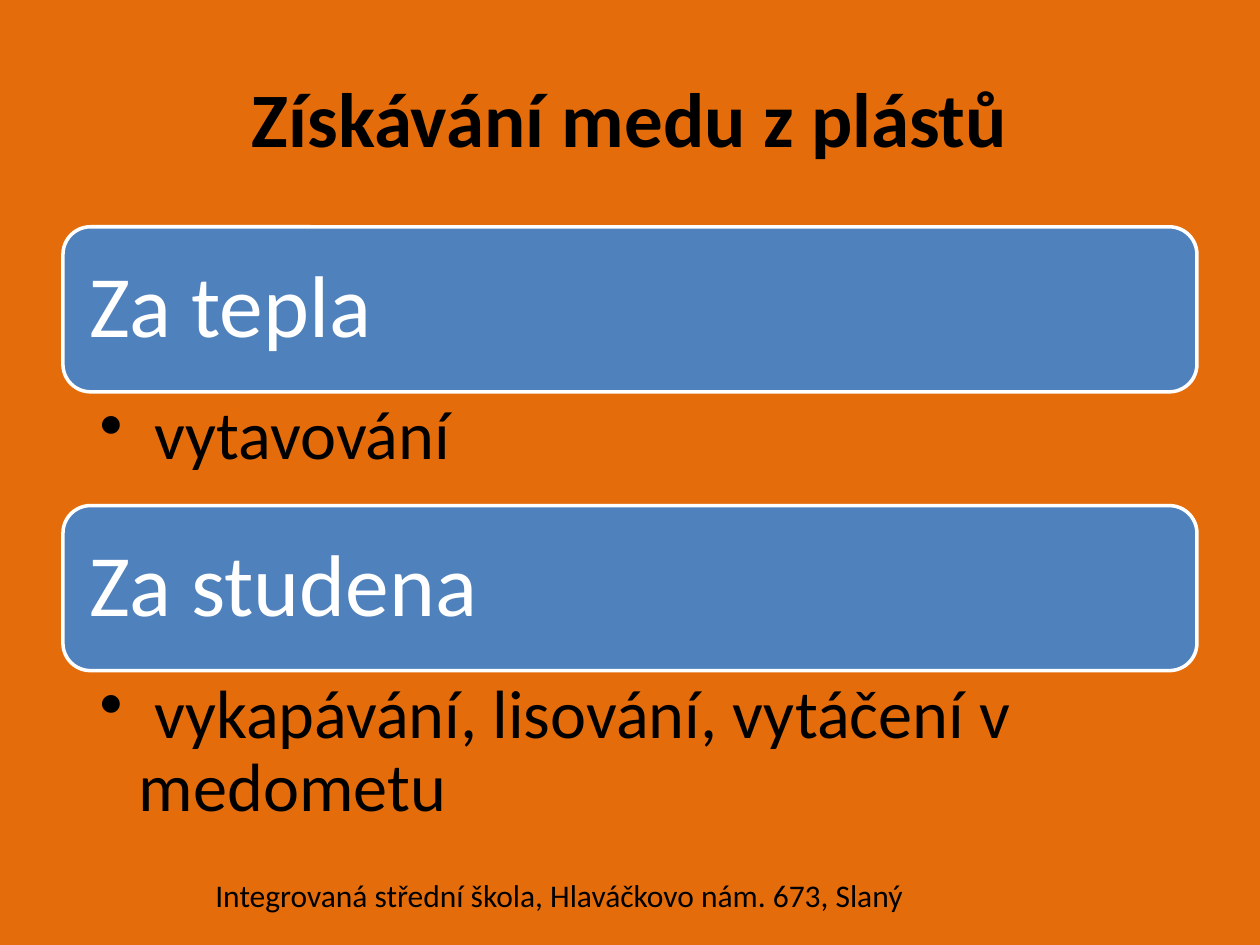
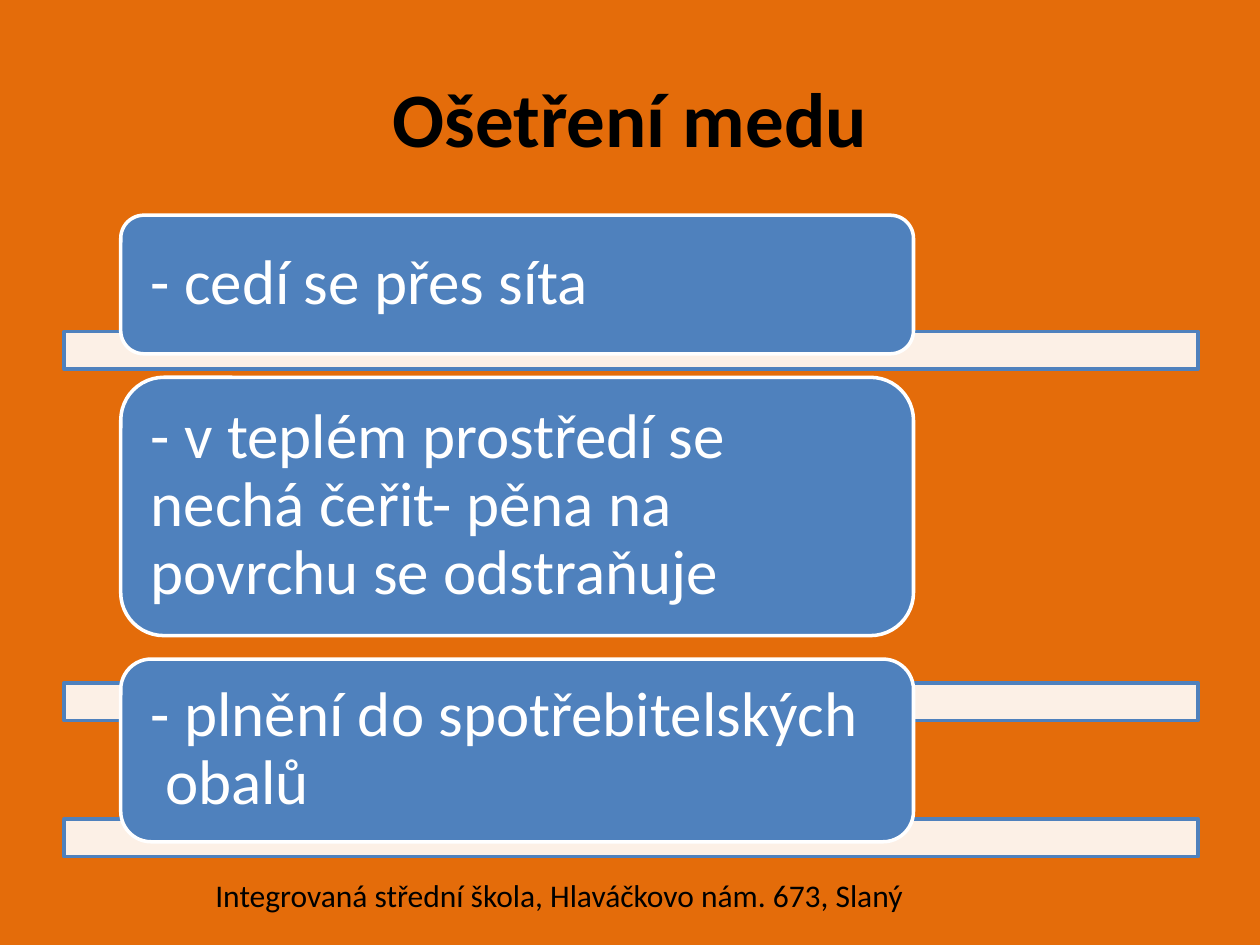
from dataclasses import dataclass

import pptx
import pptx.dml.color
import pptx.enum.shapes
import pptx.enum.text
import pptx.oxml.ns
import pptx.util
from lxml import etree

Pt = pptx.util.Pt
MSO_SHAPE = pptx.enum.shapes.MSO_SHAPE
PP_ALIGN = pptx.enum.text.PP_ALIGN
MSO_ANCHOR = pptx.enum.text.MSO_ANCHOR
qn = pptx.oxml.ns.qn

FOOTER = "Integrovaná střední škola, Hlaváčkovo nám. 673, Slaný"

# heading, detail, height of the detail
HARVEST_TITLE = "Získávání medu z plástů"
HARVEST_METHODS = [
    ("Za tepla", " vytavování", 65),
    ("Za studena", " vykapávání, lisování, vytáčení v medometu", 95.8),
]

# step, height of its box, top of the bar behind it
TREATMENT_TITLE = "Ošetření medu"
TREATMENT_STEPS = [
    ("- cedí se přes síta", 79.2, 189.4),
    ("- v teplém prostředí se nechá čeřit- pěna na povrchu se odstraňuje", 147.6, 390.2),
    ("- plnění do spotřebitelských\v obalů", 104.4, 468),
]


@dataclass(frozen=True)
class Theme:
    font: str = "Calibri"
    background: str = "E46C0A"
    box: str = "4F81BD"
    light: str = "FFFFFF"
    dark: str = "000000"
    bar_opacity: int = 90
    line_width: float = 2
    line_spacing: float = 0.9
    title_size: int = 44
    heading_size: int = 50
    detail_size: int = 39
    step_size: int = 36
    footer_size: int = 18


THEME = Theme()
MARGIN, CONTENT_WIDTH = 36, 648
CORNER_INSET = 0.16667 * 0.29289  # share of its height a rounded box adds to the insets


def rgb(value):
    return pptx.dml.color.RGBColor.from_string(value)


def write(frame, text, size, color, bold=False, align=PP_ALIGN.LEFT):
    frame.word_wrap = True
    frame.text = text
    paragraph = frame.paragraphs[0]
    paragraph.alignment = align
    paragraph.font.name = THEME.font
    paragraph.font.size = Pt(size)
    paragraph.font.bold = bold
    paragraph.font.color.rgb = rgb(color)
    return paragraph


def set_insets(frame, left, top, right, bottom):
    frame.margin_left, frame.margin_top = Pt(left), Pt(top)
    frame.margin_right, frame.margin_bottom = Pt(right), Pt(bottom)


def add_filled(slide, preset, place, fill, line):
    shape = slide.shapes.add_shape(preset, *map(Pt, place))
    shape.shadow.inherit = False
    shape.fill.solid()
    shape.fill.fore_color.rgb = rgb(fill)
    shape.line.color.rgb = rgb(line)
    shape.line.width = Pt(THEME.line_width)
    return shape


def add_box(slide, place, text, size, inset):
    box = add_filled(slide, MSO_SHAPE.ROUNDED_RECTANGLE, place, THEME.box, THEME.light)
    side = inset - CORNER_INSET * place[3]
    set_insets(box.text_frame, side, 0, side, 0)
    box.text_frame.vertical_anchor = MSO_ANCHOR.MIDDLE
    write(box.text_frame, text, size, THEME.light).line_spacing = THEME.line_spacing


def add_bar(slide, top):
    place = (MARGIN + 0.7, top, CONTENT_WIDTH, 21.6)
    bar = add_filled(slide, MSO_SHAPE.RECTANGLE, place, THEME.light, THEME.box)
    color = bar.fill._xPr.find(qn("a:solidFill"))[0]
    etree.SubElement(color, qn("a:alpha"), val=str(THEME.bar_opacity * 1000))


def add_bulleted(slide, place, text):
    frame = slide.shapes.add_textbox(*map(Pt, place)).text_frame
    set_insets(frame, 20.9, 5, 28, 5)
    paragraph = write(frame, text, THEME.detail_size, THEME.dark)
    paragraph.line_spacing = THEME.line_spacing
    properties = paragraph._p.get_or_add_pPr()
    indent = Pt(22.5)
    properties.set("marL", str(indent))
    properties.set("indent", str(-indent))
    bullet = etree.Element(qn("a:buChar"), char="•")
    properties.find(qn("a:defRPr")).addprevious(bullet)


def add_slide(deck, title):
    """Add a slide with the shared title and footer."""
    slide = deck.slides.add_slide(deck.slide_layouts[5])
    heading = slide.shapes.title
    heading.left, heading.top = Pt(MARGIN), Pt(21.6)
    heading.width, heading.height = Pt(CONTENT_WIDTH), Pt(90)
    heading.text_frame.vertical_anchor = MSO_ANCHOR.MIDDLE
    write(heading.text_frame, title, THEME.title_size, THEME.dark, True, PP_ALIGN.CENTER)
    footer = slide.shapes.add_textbox(Pt(116), Pt(496.8), Pt(532.8), Pt(29))
    write(footer.text_frame, FOOTER, THEME.footer_size, THEME.dark)
    return slide


def build_harvest(deck):
    slide = add_slide(deck, HARVEST_TITLE)
    top, heading_height = 129.6, 94.3
    for heading, detail, detail_height in HARVEST_METHODS:
        add_box(slide, (MARGIN, top, CONTENT_WIDTH, heading_height),
                heading, THEME.heading_size, 15)
        top += heading_height
        add_bulleted(slide, (MARGIN, top, CONTENT_WIDTH, detail_height), detail)
        top += detail_height


def build_treatment(deck):
    slide = add_slide(deck, TREATMENT_TITLE)
    top, gap = 123, 13.4
    for step, height, bar_top in TREATMENT_STEPS:
        add_bar(slide, bar_top)
        add_box(slide, (69, top, 453, height), step, THEME.step_size, 17.2)
        top += height + gap


def main():
    deck = pptx.Presentation()
    deck.slide_width, deck.slide_height = Pt(720), Pt(540)
    background = deck.slide_master.background.fill
    background.solid()
    background.fore_color.rgb = rgb(THEME.background)
    build_harvest(deck)
    build_treatment(deck)
    deck.save("out.pptx")


if __name__ == "__main__":
    main()
